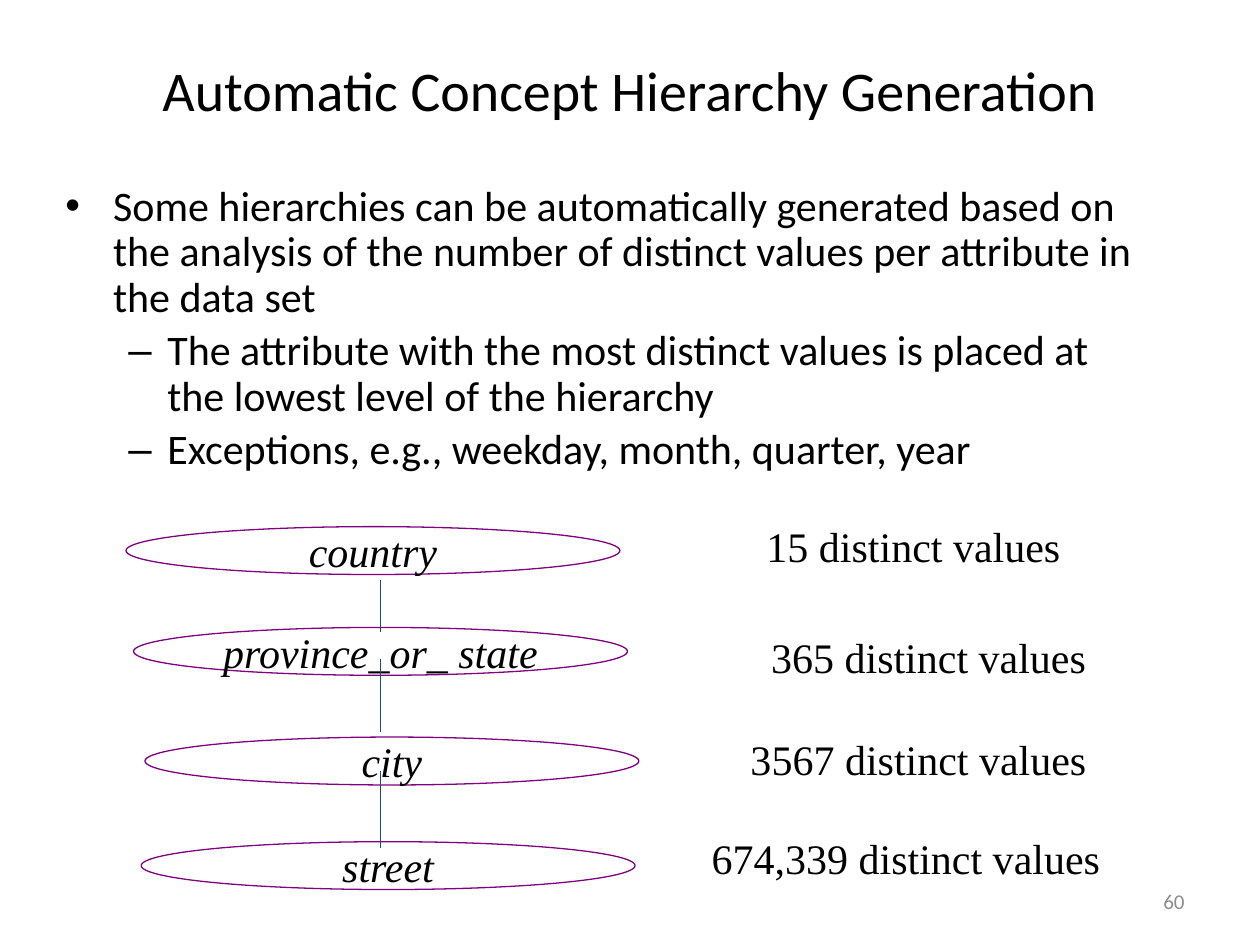
from lxml import etree
from pptx import Presentation
from pptx.dml.color import RGBColor
from pptx.enum.shapes import MSO_CONNECTOR, MSO_SHAPE
from pptx.enum.text import MSO_ANCHOR, MSO_AUTO_SIZE, PP_ALIGN
from pptx.oxml.ns import qn
from pptx.util import Inches, Pt

CENTER, RIGHT = PP_ALIGN.CENTER, PP_ALIGN.RIGHT
TOP, MIDDLE = MSO_ANCHOR.TOP, MSO_ANCHOR.MIDDLE
FIT_SHAPE = MSO_AUTO_SIZE.SHAPE_TO_FIT_TEXT
STRAIGHT, OVAL = MSO_CONNECTOR.STRAIGHT, MSO_SHAPE.OVAL

SANS = {"name": "Calibri", "size": Pt(24)}
SERIF = {"name": "Times New Roman", "size": Pt(24)}
BLACK, GRAY, PURPLE, BLUE = "000000", "8C8C8C", "800080", "1F497D"

# Level: bullet, left margin, hanging indent
BULLETS = [("•", 0.38, -0.38), ("–", 0.81, -0.31)]
BODY = [
    (0, "Some hierarchies can be automatically generated based on the analysis "
        "of the number of distinct values per attribute in the data set"),
    (1, "The attribute with the most distinct values is placed at the lowest "
        "level of the hierarchy"),
    (1, "Exceptions, e.g., weekday, month, quarter, year"),
]
# Attribute name, left, top
ATTRIBUTES = [
    ("country", 1, 4.18),
    ("province_or_ state", 1.06, 4.98),
    ("city", 1.15, 5.85),
    ("street", 1.12, 6.68),
]
LINK_X = 3.02
LINKS = [(4.6, 5.02), (5.23, 5.81), (6.12, 6.73)]
# Count text, left, top, width (each a little wider than its text)
COUNTS = [
    ("15 distinct values", 5.95, 4.08, 2.6),
    ("365 distinct values", 5.97, 4.96, 2.8),
    ("3567 distinct values", 5.81, 5.77, 2.96),
    ("674,339 distinct values", 5.5, 6.56, 3.38),
]


def color(value):
    return RGBColor.from_string(value)


def set_all(target, values):
    for name, value in values.items():
        setattr(target, name, value)


def write(paragraph, text, font, font_color=BLACK, alignment=None):
    paragraph.alignment = alignment
    run = paragraph.add_run()
    run.text = text
    set_all(run.font, font)
    run.font.color.rgb = color(font_color)


def add_box(slide, left, top, width, height, **frame_format):
    box = slide.shapes.add_textbox(
        Inches(left), Inches(top), Inches(width), Inches(height))
    set_all(box.text_frame, {"word_wrap": True, **frame_format})
    return box.text_frame


def set_bullet(paragraph, level):
    character, margin, indent = BULLETS[level]
    paragraph.level = level
    properties = paragraph._p.get_or_add_pPr()
    properties.set("marL", str(Inches(margin)))
    properties.set("indent", str(Inches(indent)))
    font = etree.SubElement(properties, qn("a:buFont"))
    font.set("typeface", "Arial")
    etree.SubElement(properties, qn("a:buChar")).set("char", character)


def add_body(slide):
    frame = add_box(slide, 0.42, 1.42, 8.83, 2.5, vertical_anchor=TOP)
    for index, (level, text) in enumerate(BODY):
        paragraph = frame.add_paragraph() if index else frame.paragraphs[0]
        set_all(paragraph, {"line_spacing": 0.9, "space_before": Pt(4.8)})
        set_bullet(paragraph, level)
        write(paragraph, text, SANS)


def add_attribute(slide, text, left, top):
    shape = slide.shapes.add_shape(
        OVAL, Inches(left), Inches(top), Inches(3.92), Inches(0.38))
    shape.shadow.inherit = False
    shape.fill.background()
    shape.line.color.rgb = color(PURPLE)
    shape.line.width = Pt(0.75)
    set_all(shape.text_frame, {"word_wrap": False, "vertical_anchor": MIDDLE})
    write(shape.text_frame.paragraphs[0], text, {**SERIF, "italic": True},
          alignment=CENTER)


def add_link(slide, start, end):
    line = slide.shapes.add_connector(
        STRAIGHT, Inches(LINK_X), Inches(start), Inches(LINK_X), Inches(end))
    line.line.color.rgb = color(BLUE)
    line.line.width = Pt(0.75)
    etree.SubElement(line._element.spPr, qn("a:effectLst"))


def main():
    presentation = Presentation()
    presentation.slide_width, presentation.slide_height = Inches(10), Inches(7.5)
    slide = presentation.slides.add_slide(presentation.slide_layouts[6])

    # Title, bullets and slide number
    title = add_box(slide, 0, 0.33, 10, 0.75, vertical_anchor=MIDDLE)
    write(title.paragraphs[0], "Automatic Concept Hierarchy Generation",
          {**SANS, "size": Pt(32)}, alignment=CENTER)
    add_body(slide)
    number = add_box(slide, 7.17, 6.95, 2.33, 0.4, vertical_anchor=MIDDLE)
    write(number.paragraphs[0], "60", {**SANS, "size": Pt(12)}, GRAY, RIGHT)

    # Hierarchy of attributes
    for attribute in ATTRIBUTES:
        add_attribute(slide, *attribute)
    for link in LINKS:
        add_link(slide, *link)

    # Distinct value counts
    for text, left, top, width in COUNTS:
        frame = add_box(slide, left, top, width, 0.5,
                        word_wrap=False, auto_size=FIT_SHAPE)
        write(frame.paragraphs[0], text, SERIF, alignment=CENTER)

    presentation.save("out.pptx")


if __name__ == "__main__":
    main()
